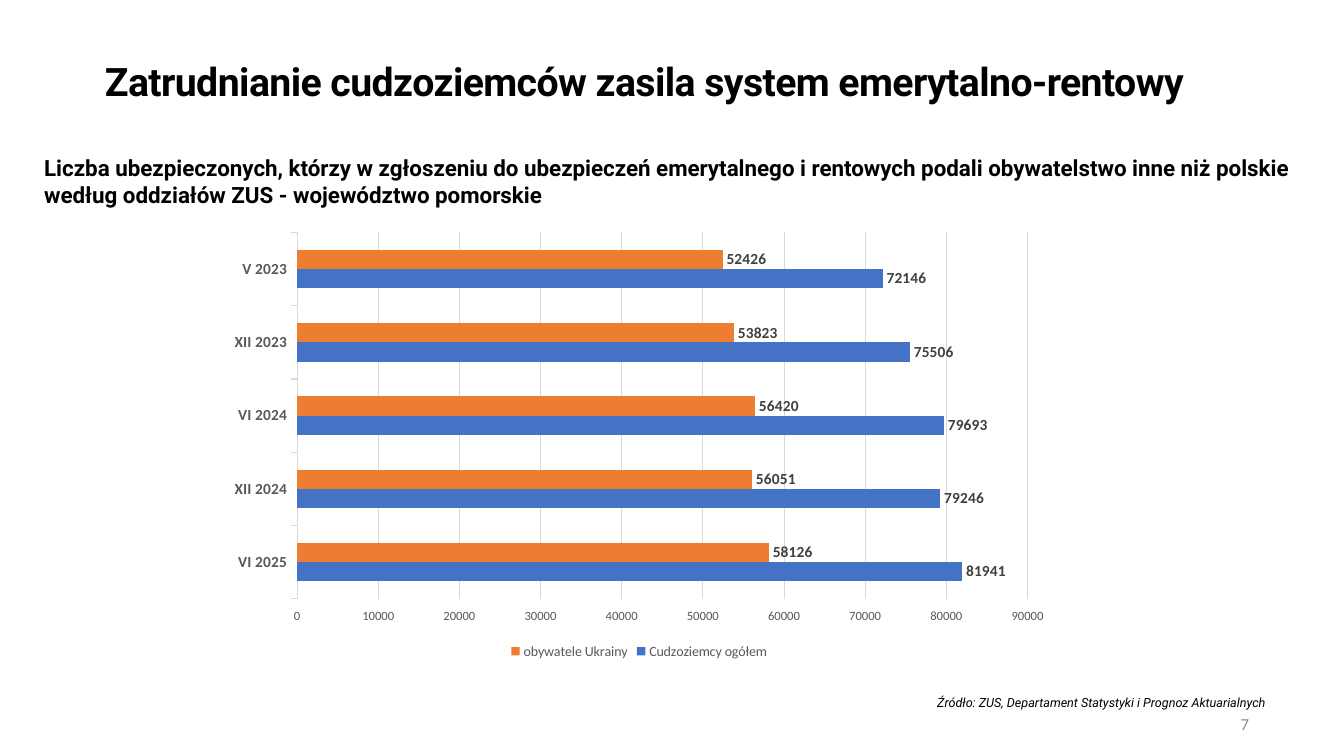
from dataclasses import dataclass

from pptx import Presentation
from pptx.chart.data import CategoryChartData
from pptx.dml.color import RGBColor
from pptx.enum.chart import XL_CHART_TYPE, XL_LABEL_POSITION, XL_LEGEND_POSITION, XL_TICK_MARK
from pptx.enum.text import MSO_ANCHOR, PP_ALIGN
from pptx.util import Inches, Pt

BLACK = RGBColor(0x00, 0x00, 0x00)
DARK = RGBColor(0x40, 0x40, 0x40)
GREY = RGBColor(0x59, 0x59, 0x59)
PALE = RGBColor(0x8C, 0x8C, 0x8C)
GRID = RGBColor(0xD9, 0xD9, 0xD9)
BLUE = RGBColor(0x44, 0x72, 0xC4)
ORANGE = RGBColor(0xED, 0x7D, 0x31)

WIDTH, HEIGHT = Inches(13.33), Inches(7.5)


@dataclass(frozen=True)
class Box:
    """Left, top, width and height in percent of the slide."""
    x: float
    y: float
    w: float
    h: float

    def emu(self) -> tuple[int, int, int, int]:
        return (int(WIDTH * self.x / 100), int(HEIGHT * self.y / 100),
                int(WIDTH * self.w / 100), int(HEIGHT * self.h / 100))


@dataclass(frozen=True)
class Label:
    text: str
    box: Box
    size: float
    font: str = "Roboto"
    color: RGBColor = BLACK
    bold: bool = False
    italic: bool = False
    align: PP_ALIGN = PP_ALIGN.LEFT
    anchor: MSO_ANCHOR = MSO_ANCHOR.TOP


@dataclass(frozen=True)
class Series:
    name: str
    values: tuple[int, ...]
    color: RGBColor


TITLE = Label("Zatrudnianie cudzoziemców zasila system emerytalno-rentowy",
              Box(7.05, 6.93, 94.9, 7.6), 28, bold=True)
LABELS = (
    Label("Liczba ubezpieczonych, którzy w zgłoszeniu do ubezpieczeń emerytalnego i rentowych "
          "podali obywatelstwo inne niż polskie według oddziałów ZUS - województwo pomorskie",
          Box(2.55, 19.73, 95.65, 8.53), 16, bold=True),
    Label("Źródło: ZUS, Departament Statystyki i Prognoz Aktuarialnych",
          Box(69, 91.33, 28.43, 3.33), 9, italic=True),
    Label("7", Box(70.2, 93.07, 23.48, 5.33), 12, font="Calibri", color=PALE,
          align=PP_ALIGN.RIGHT, anchor=MSO_ANCHOR.MIDDLE),
)
CHART_BOX = Box(16.2, 29.6, 62.7, 58.13)
PERIODS = ("VI 2025", "XII 2024", "VI 2024", "XII 2023", "V 2023")
SERIES = (
    Series("Cudzoziemcy ogółem", (81941, 79246, 79693, 75506, 72146), BLUE),
    Series("obywatele Ukrainy", (58126, 56051, 56420, 53823, 52426), ORANGE),
)


def set_font(font, name: str, size: float, color: RGBColor,
             bold: bool = False, italic: bool = False) -> None:
    font.name, font.size = name, Pt(size)
    font.bold, font.italic = bold, italic
    font.color.rgb = color


def write(sp, label: Label) -> None:
    sp.left, sp.top, sp.width, sp.height = label.box.emu()
    tf = sp.text_frame
    tf.word_wrap = True
    tf.vertical_anchor = label.anchor
    p = tf.paragraphs[0]
    p.text = label.text
    p.alignment = label.align
    set_font(p.font, label.font, label.size, label.color, label.bold, label.italic)


def add_bar_chart(slide) -> None:
    data = CategoryChartData(number_format="General")
    data.categories = PERIODS
    for series in SERIES:
        data.add_series(series.name, series.values)
    chart = slide.shapes.add_chart(XL_CHART_TYPE.BAR_CLUSTERED, *CHART_BOX.emu(), data).chart
    chart.has_title = False
    set_font(chart.font, "Calibri", 10, BLACK)

    # Bars and their values
    plot = chart.plots[0]
    plot.gap_width = 182
    plot.overlap = 0
    plot.vary_by_categories = False
    for series, bars in zip(SERIES, plot.series):
        bars.format.fill.solid()
        bars.format.fill.fore_color.rgb = series.color
        bars.invert_if_negative = False
        labels = bars.data_labels
        labels.show_value = True
        labels.position = XL_LABEL_POSITION.OUTSIDE_END
        set_font(labels.font, "Calibri", 11, DARK, bold=True)

    # Axes
    periods, counts = chart.category_axis, chart.value_axis
    periods.major_tick_mark = counts.major_tick_mark = XL_TICK_MARK.OUTSIDE
    set_font(periods.tick_labels.font, "Calibri", 11, GREY, bold=True)
    set_font(counts.tick_labels.font, "Calibri", 9, GREY)
    counts.minimum_scale, counts.maximum_scale, counts.major_unit = 0, 90000, 10000
    counts.has_major_gridlines = True
    counts.format.line.fill.background()
    for line in (periods.format.line, counts.major_gridlines.format.line):
        line.color.rgb = GRID
        line.width = Pt(0.75)

    # Legend
    chart.has_legend = True
    chart.legend.position = XL_LEGEND_POSITION.BOTTOM
    chart.legend.include_in_layout = False
    set_font(chart.legend.font, "Calibri", 10, GREY)


def main() -> None:
    prs = Presentation()
    prs.slide_width, prs.slide_height = WIDTH, HEIGHT
    slide = prs.slides.add_slide(prs.slide_layouts[5])

    # Title, slightly tightened
    title = slide.shapes.title
    write(title, TITLE)
    title.text_frame.paragraphs[0].runs[0].font._element.set("spc", "-40")

    # Subtitle, source and page number
    for label in LABELS:
        write(slide.shapes.add_textbox(*label.box.emu()), label)

    add_bar_chart(slide)
    prs.save("out.pptx")


if __name__ == "__main__":
    main()
